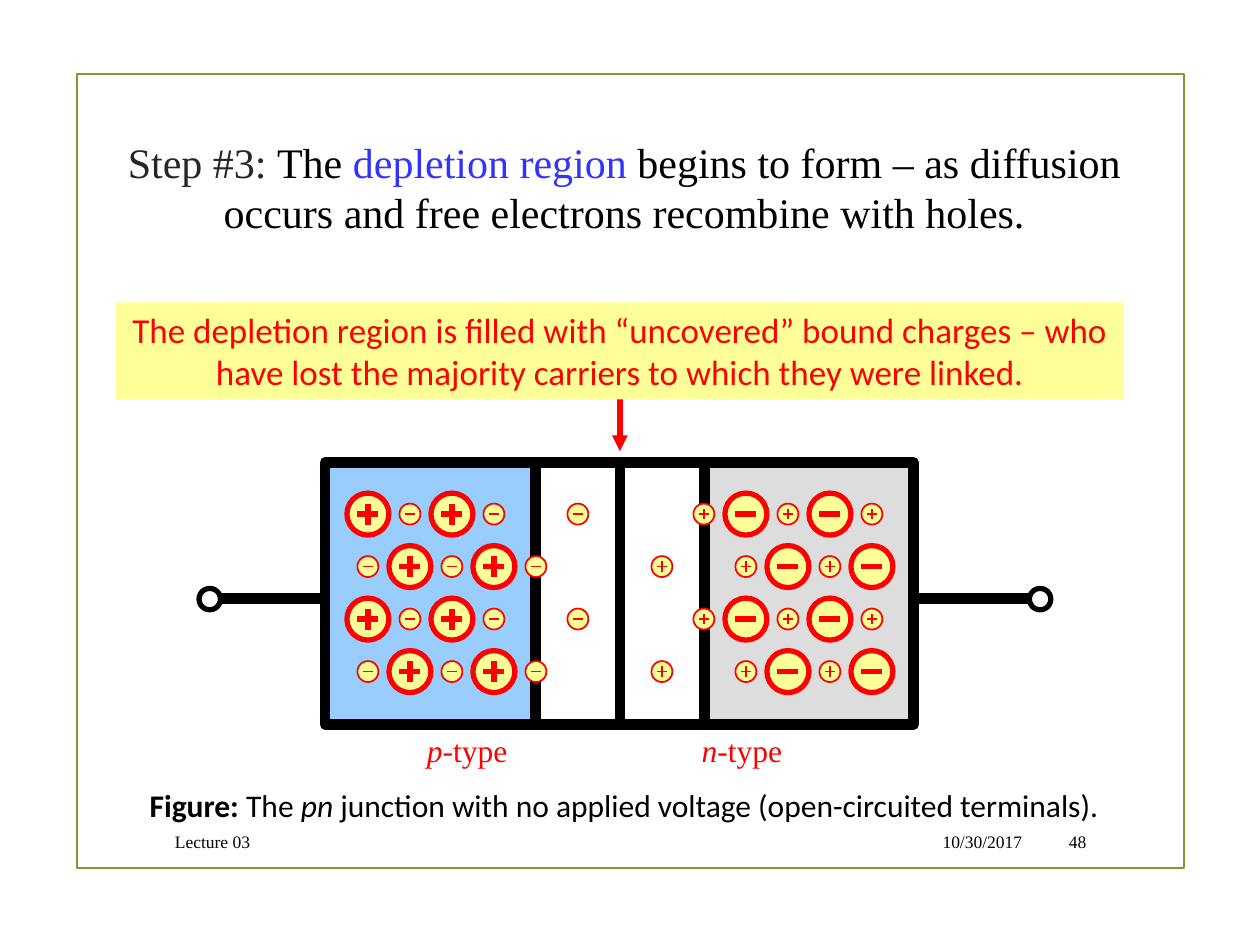
"""Build a slide on the depletion region of an open-circuited pn junction."""
from lxml import etree
from pptx import Presentation
from pptx.dml.color import RGBColor
from pptx.enum.shapes import MSO_CONNECTOR, MSO_SHAPE
from pptx.enum.text import MSO_ANCHOR, MSO_AUTO_SIZE, PP_ALIGN
from pptx.oxml.ns import qn
from pptx.util import Inches, Pt

RECTANGLE, ELLIPSE = MSO_SHAPE.RECTANGLE, MSO_SHAPE.OVAL
STRAIGHT = MSO_CONNECTOR.STRAIGHT
TOP, MIDDLE = MSO_ANCHOR.TOP, MSO_ANCHOR.MIDDLE
LEFT, CENTER, RIGHT = PP_ALIGN.LEFT, PP_ALIGN.CENTER, PP_ALIGN.RIGHT
NO_AUTOFIT = MSO_AUTO_SIZE.NONE

BLACK, WHITE, RED, YELLOW = "000000", "FFFFFF", "FF0000", "FFFF99"
SERIF, SANS = "Times New Roman", "Calibri"


def color(value):
    return RGBColor.from_string(value)


def span(text, **style):
    return text, style


class SlideBuilder:
    """Hold the default text style and the current slide."""

    def __init__(self, page):
        self.page = page
        self.style = {"size": 18, "font": SERIF, "ink": BLACK, "bold": False, "italic": False}

    def put_text(self, box, spans, align=LEFT, anchor=TOP, wrap=True, **style):
        frame = box.text_frame
        frame.auto_size = NO_AUTOFIT
        frame.word_wrap = wrap
        frame.vertical_anchor = anchor
        para = frame.paragraphs[0]
        para.alignment = align
        for text, changes in spans:
            look = {**self.style, **style, **changes}
            run = para.add_run()
            run.text = text
            run.font.name = look["font"]
            run.font.size = Pt(look["size"])
            run.font.color.rgb = color(look["ink"])
            run.font.bold = look["bold"]
            run.font.italic = look["italic"]

    def title(self, left, top, width, height, spans, **style):
        box = self.page.shapes.title
        box.left, box.top = Inches(left), Inches(top)
        box.width, box.height = Inches(width), Inches(height)
        self.put_text(box, spans, align=CENTER, anchor=MIDDLE, **style)

    def text(self, left, top, width, height, spans, **style):
        box = self.page.shapes.add_textbox(Inches(left), Inches(top), Inches(width), Inches(height))
        self.put_text(box, spans, **style)

    def shape(self, kind, left, top, width, height, fill=None, line=None, weight=1, parent=None):
        shapes = (parent or self.page).shapes
        shape = shapes.add_shape(kind, Inches(left), Inches(top), Inches(width), Inches(height))
        shape.shadow.inherit = False
        if fill:
            shape.fill.solid()
            shape.fill.fore_color.rgb = color(fill)
        else:
            shape.fill.background()
        if line:
            shape.line.color.rgb = color(line)
            shape.line.width = Pt(weight)
        else:
            shape.line.fill.background()
        return shape

    def line(self, x1, y1, x2, y2, ink, weight, arrow=False, parent=None):
        shapes = (parent or self.page).shapes
        line = shapes.add_connector(STRAIGHT, Inches(x1), Inches(y1), Inches(x2), Inches(y2))
        line.line.color.rgb = color(ink)
        line.line.width = Pt(weight)
        properties = line._element.spPr
        if arrow:
            etree.SubElement(properties.get_or_add_ln(), qn("a:tailEnd"), type="triangle")
        etree.SubElement(properties, qn("a:effectLst"))

    def charge(self, x, y, size, weight, positive):
        group = self.page.shapes.add_group_shape()
        self.shape(ELLIPSE, x - size / 2, y - size / 2, size, size, YELLOW, RED, weight, group)
        arm = size / 4
        self.line(x - arm, y, x + arm, y, RED, weight, parent=group)
        if positive:
            self.line(x, y - arm, x, y + arm, RED, weight, parent=group)


def draw_junction(builder):
    builder.line(1.67, 4.75, 8.25, 4.75, BLACK, 6)
    for left in (1.58, 8.17):
        builder.shape(ELLIPSE, left, 4.67, 0.17, 0.17, WHITE, BLACK, 3)
    regions = [(2.58, 2.33, "99CCFF"), (4.92, 2.33, "DDDDDD"), (4.92, 0.67, WHITE), (4.25, 0.67, WHITE)]
    for left, width, fill in regions:
        builder.shape(RECTANGLE, left, 3.67, width, 2.08, fill, BLACK, 6)


def draw_charges(builder):
    sides = [(range(0, 6), range(0, 4), 0, True), (range(7, 13), range(9, 13), 1, False)]
    for columns, bulk, parity, large_positive in sides:
        for row in range(4):
            for column in columns:
                x, y = 2.92 + column / 3, 4.08 + row * 5 / 12
                if (row + column) % 2 != parity:
                    builder.charge(x, y, 1 / 6, 1, not large_positive)
                elif column in bulk:
                    builder.charge(x, y, 1 / 3, 3, large_positive)


def main():
    deck = Presentation()
    deck.slide_width, deck.slide_height = Inches(10), Inches(7.5)
    builder = SlideBuilder(deck.slides.add_slide(deck.slide_layouts[5]))

    builder.shape(RECTANGLE, 0.61, 0.59, 8.79, 6.3, line="83992A", weight=1.25)
    builder.title(0.83, 0.77, 8.25, 1.42, [
        span("Step #3: ", ink="262626"),
        span("The "),
        span("depletion region", ink="3333FF"),
        span(" begins to form – as diffusion occurs and free electrons recombine with holes."),
    ], size=24)

    builder.line(4.92, 2.83, 4.92, 3.58, RED, 3, arrow=True)
    callout = builder.shape(RECTANGLE, 0.92, 2.4, 8, 0.77, YELLOW)
    builder.put_text(callout, [span(
        "The depletion region is filled with “uncovered” bound charges – who have lost "
        "the majority carriers to which they were linked.")],
        align=CENTER, size=20, font=SANS, ink=RED)

    draw_junction(builder)
    draw_charges(builder)

    caption = builder.shape(RECTANGLE, 0.83, 6.19, 8.25, 0.4, WHITE)
    builder.put_text(caption, [
        span("Figure:", bold=True),
        span(" The "),
        span("pn", italic=True),
        span(" junction with no applied voltage (open-circuited terminals)."),
    ], align=CENTER, font=SANS)
    for left, width, letter in ((3.29, 0.87, "p"), (5.47, 0.9, "n")):
        builder.text(left, 5.75, width, 0.4, [span(letter, italic=True), span("-type")],
                     ink=RED, wrap=False)

    footers = [(1.29, 5.58, "Lecture 03", LEFT), (6.95, 1.26, "10/30/2017", RIGHT), (8.29, 0.43, "48", RIGHT)]
    for left, width, text, align in footers:
        builder.text(left, 6.52, width, 0.31, [span(text)], align=align, anchor=MIDDLE, size=10)

    deck.save("out.pptx")


if __name__ == "__main__":
    main()
